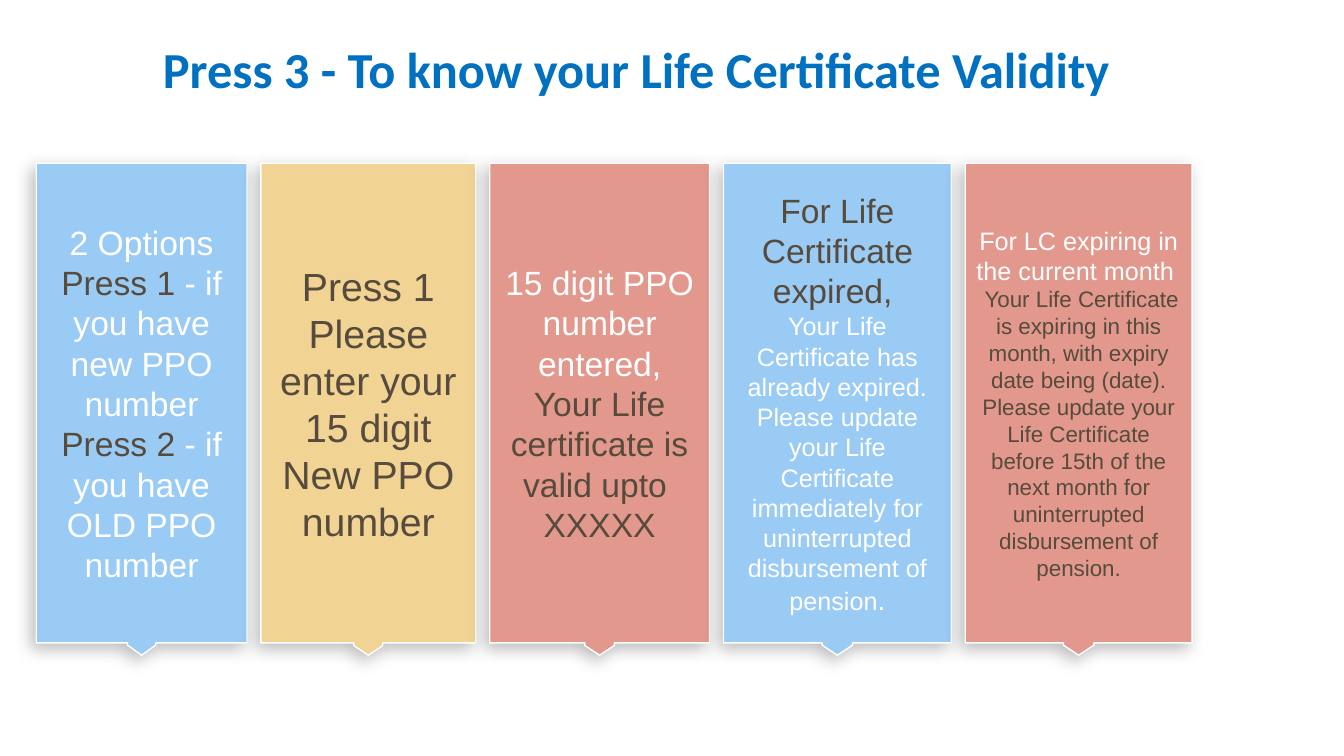
from lxml import etree
from pptx import Presentation
from pptx.dml.color import RGBColor
from pptx.enum.shapes import MSO_SHAPE
from pptx.enum.text import MSO_ANCHOR, PP_ALIGN
from pptx.oxml.ns import qn
from pptx.util import Pt

WHITE = RGBColor(0xFF, 0xFF, 0xFF)
BROWN = RGBColor(0x56, 0x4B, 0x3C)
TITLE_BLUE = RGBColor(0x00, 0x70, 0xC0)
BLUE = RGBColor(0x9A, 0xCB, 0xF4)
YELLOW = RGBColor(0xF1, 0xD3, 0x94)
RED = RGBColor(0xE2, 0x98, 0x8C)

CARD_LEFT, CARD_TOP, CARD_HEIGHT, CARD_GAP = 25.9, 116.6, 351.4, 10

# Each card: width, fill, arrow length, paragraphs of (text, size, colour) runs
CARDS = [
    (150.5, BLUE, 0.048, [
        [("2 Options", 24, WHITE)],
        [("Press 1 ", 24, BROWN), ("- if you have new PPO number", 24, WHITE)],
        [("Press 2", 24, BROWN), (" - if you have OLD PPO number", 24, WHITE)],
    ]),
    (153.4, YELLOW, 0.044, [
        [("Press 1", 28, BROWN)],
        [("Please enter your 15 digit New PPO number", 28, BROWN)],
    ]),
    (157, RED, 0.044, [
        [("15 digit PPO number entered, ", 24, WHITE),
         ("Your Life certificate is valid upto ", 24, BROWN)],
        [("XXXXX", 24, BROWN)],
    ]),
    (162.7, BLUE, 0.044, [
        [("For Life Certificate expired, ", 24, BROWN)],
        [("Your Life Certificate has already expired. Please update your Life "
          "Certificate immediately for uninterrupted disbursement of pension", 18, WHITE),
         (".", 20, WHITE)],
    ]),
    (162, RED, 0.044, [
        [("For LC expiring in the current month ", 18, WHITE)],
        [(" Your Life Certificate is expiring in this month, with expiry date being "
          "(date). Please update your Life Certificate before 15th of the next month "
          "for uninterrupted disbursement of pension.", 16, BROWN)],
    ]),
]


def style_font(font, name, size, color):
    font.name = name
    font.size = Pt(size)
    font.color.rgb = color


def fill_paragraph(paragraph, runs, font_name):
    """Write the runs centred; a single run takes its font from the paragraph."""
    paragraph.alignment = PP_ALIGN.CENTER
    for text, size, color in runs:
        run = paragraph.add_run()
        run.text = text
        font = paragraph.font if len(runs) == 1 else run.font
        style_font(font, font_name, size, color)


def add_soft_shadow(shape):
    shape.shadow.inherit = False
    effects = shape._element.spPr.find(qn("a:effectLst"))
    shadow = etree.SubElement(effects, qn("a:outerShdw"), blurRad=str(Pt(12)),
                              dist=str(Pt(5)), dir=str(135 * 60000),
                              algn="tr", rotWithShape="0")
    color = etree.SubElement(shadow, qn("a:srgbClr"), val="000000")
    etree.SubElement(color, qn("a:alpha"), val="26000")


def add_title(slide, text):
    box = slide.shapes.add_textbox(Pt(18.7), Pt(23.8), Pt(872), Pt(70.6))
    box.text_frame.word_wrap = True
    paragraph = box.text_frame.paragraphs[0]
    fill_paragraph(paragraph, [(text, 36, TITLE_BLUE)], "Calibri")
    paragraph.font.bold = True


def add_card(slide, left, width, fill, arrow_length, paragraphs):
    card = slide.shapes.add_shape(MSO_SHAPE.DOWN_ARROW_CALLOUT, Pt(left), Pt(CARD_TOP),
                                  Pt(width), Pt(CARD_HEIGHT))
    for index, value in enumerate((0.25, 0.067, arrow_length, 0.975)):
        card.adjustments[index] = value
    card.fill.solid()
    card.fill.fore_color.rgb = fill
    card.line.color.rgb = WHITE
    card.line.width = Pt(1)
    add_soft_shadow(card)
    frame = card.text_frame
    frame.word_wrap = True
    frame.vertical_anchor = MSO_ANCHOR.MIDDLE
    for index, runs in enumerate(paragraphs):
        paragraph = frame.add_paragraph() if index else frame.paragraphs[0]
        fill_paragraph(paragraph, runs, "Arial")


def main():
    presentation = Presentation()
    presentation.slide_width = Pt(960)
    presentation.slide_height = Pt(540)
    slide = presentation.slides.add_slide(presentation.slide_layouts[6])
    add_title(slide, "Press 3 - To know your Life Certificate Validity")
    left = CARD_LEFT
    for width, fill, arrow_length, paragraphs in CARDS:
        add_card(slide, left, width, fill, arrow_length, paragraphs)
        left += width + CARD_GAP
    presentation.save("out.pptx")


if __name__ == "__main__":
    main()
